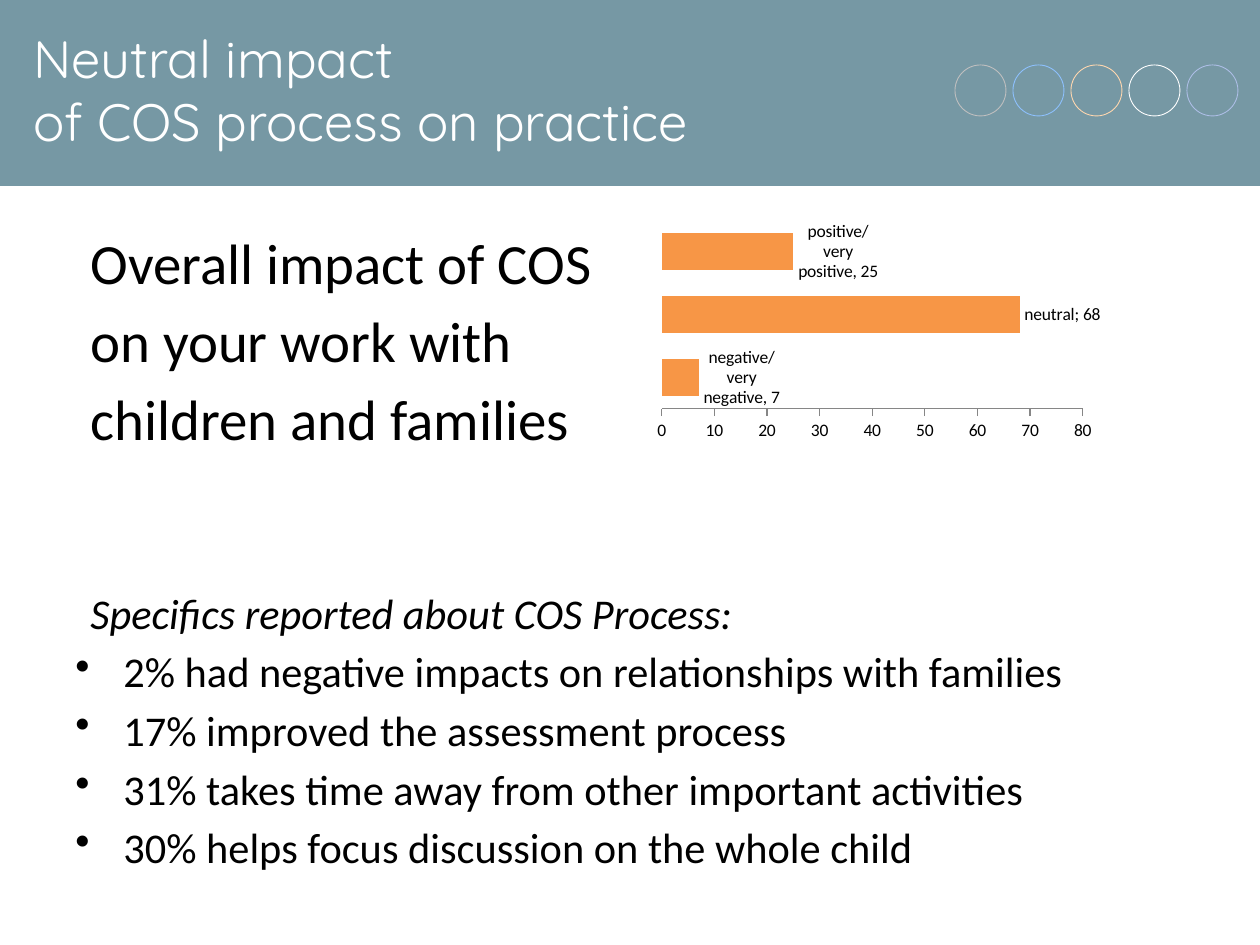
import pptx
import pptx.chart.data
import pptx.dml.color
import pptx.enum.chart
import pptx.enum.shapes
import pptx.enum.text
import pptx.oxml
import pptx.oxml.ns
import pptx.util

COLORS = {
    "band": "7698A4", "white": "FFFFFF", "black": "000000", "bar": "F79646",
    "axis": "868686", "grey": "BFBFBF", "sky": "8DC0FD", "peach": "FFD7AF",
    "periwinkle": "ADBEE6",
}
CHART_NS = pptx.oxml.ns.nsdecls("c")


def px(n):
    return pptx.util.Emu(round(n * 914400 / 126))


def rgb(name):
    return pptx.dml.color.RGBColor.from_string(COLORS[name])


class SlideBuilder:
    body_font = "Calibri"
    title_font = "Quicksand"

    def __init__(self, slide):
        self.s = slide

    def shape(self, kind, box, fill=None, line=None):
        sp = self.s.shapes.add_shape(kind, *map(px, box))
        sp.shadow.inherit = False
        if fill:
            sp.fill.solid()
            sp.fill.fore_color.rgb = rgb(fill)
        else:
            sp.fill.background()
        if line:
            sp.line.color.rgb = rgb(line)
            sp.line.width = pptx.util.Pt(0.5)
        else:
            sp.line.fill.background()

    def text_frame(self, box):
        tf = self.s.shapes.add_textbox(*map(px, box)).text_frame
        tf.word_wrap = True
        return tf

    def style(self, p, size, font, color, italic=False):
        for r in p.runs:
            r.font.size = pptx.util.Pt(size)
            r.font.name = font
            r.font.color.rgb = rgb(color)
            r.font.italic = italic

    def title(self, box, text):
        tf = self.text_frame(box)
        tf.vertical_anchor = pptx.enum.text.MSO_ANCHOR.MIDDLE
        p = tf.paragraphs[0]
        p.text = text
        self.style(p, 30, self.title_font, "white")

    def body(self, box, lines):
        """Each line is (text, size, space before, italic, bulleted)."""
        tf = self.text_frame(box)
        tf.text = "\n".join(line[0] for line in lines)
        for p, (_, size, before, italic, bulleted) in zip(tf.paragraphs, lines):
            p.space_before = pptx.util.Pt(before)
            self.style(p, size, self.body_font, "black", italic)
            pPr = p._p.get_or_add_pPr()
            pPr.set("marL", str(px(48 if bulleted else 15)))
            pPr.set("indent", str(px(-48 if bulleted else 0)))
            if bulleted:
                pPr.append(pptx.oxml.parse_xml(
                    f'<a:buChar {pptx.oxml.ns.nsdecls("a")} char="•"/>'))

    def bar_chart(self, box, values, point_labels):
        data = pptx.chart.data.CategoryChartData()
        data.categories = list(values)
        data.add_series("Series 1", list(values.values()))
        chart = self.s.shapes.add_chart(
            pptx.enum.chart.XL_CHART_TYPE.BAR_CLUSTERED, *map(px, box), data).chart
        chart.has_legend = chart.has_title = False
        chart.font.size = pptx.util.Pt(10)
        chart.font.name = self.body_font
        chart.font.color.rgb = rgb("black")

        chart.category_axis.visible = False
        axis = chart.value_axis
        axis.has_major_gridlines = False
        axis.minimum_scale, axis.maximum_scale, axis.major_unit = 0, 80, 10
        axis.major_tick_mark = pptx.enum.chart.XL_TICK_MARK.OUTSIDE
        axis.format.line.color.rgb = rgb("axis")

        plot = chart.plots[0]
        plot.vary_by_categories = False
        plot.gap_width, plot.overlap = 69, 20
        series = plot.series[0]
        series.format.fill.solid()
        series.format.fill.fore_color.rgb = rgb("bar")
        self.bar_labels(series, point_labels)
        self.plot_layout(chart, x=0.046, y=0.083, w=0.89, h=0.75)

    def bar_labels(self, series, point_labels):
        outside = pptx.enum.chart.XL_LABEL_POSITION.OUTSIDE_END
        labels = series.data_labels
        labels.show_value = labels.show_category_name = True
        labels.position = outside
        labels._element.find(pptx.oxml.ns.qn("c:showBubbleSize")).addnext(
            pptx.oxml.parse_xml(f"<c:separator {CHART_NS}>; </c:separator>"))
        for index, text in point_labels.items():
            label = series.points[index].data_label
            label.text_frame.text = text
            self.style(label.text_frame.paragraphs[0], 10, self.body_font, "black")
            label.position = outside

    def plot_layout(self, chart, **fractions):
        area = chart._chartSpace.chart.plotArea
        for old in area.findall(pptx.oxml.ns.qn("c:layout")):
            area.remove(old)
        sizes = "".join(f'<c:{k} val="{v}"/>' for k, v in fractions.items())
        area.insert(0, pptx.oxml.parse_xml(
            f'<c:layout {CHART_NS}><c:manualLayout><c:layoutTarget val="inner"/>'
            f'<c:xMode val="edge"/><c:yMode val="edge"/>{sizes}'
            "</c:manualLayout></c:layout>"))


def main():
    prs = pptx.Presentation()
    prs.slide_width, prs.slide_height = px(1260), px(945)
    b = SlideBuilder(prs.slides.add_slide(prs.slide_layouts[6]))
    kinds = pptx.enum.shapes.MSO_SHAPE

    b.shape(kinds.RECTANGLE, (0, -3, 1260, 189), fill="band")
    for i, color in enumerate(["grey", "sky", "peach", "white", "periwinkle"]):
        b.shape(kinds.OVAL, (955 + 58 * i, 65, 51, 51), line=color)
    b.title((21, 10, 1092, 158), "Neutral impact\vof COS process on practice")

    headline = ["Overall impact of COS", "on your work with", "children and families"]
    findings = [
        "2% had negative impacts on relationships with families",
        "17% improved the assessment process",
        "31% takes time away from other important activities",
        "30% helps focus discussion on the whole child",
    ]
    b.body((63, 221, 1050, 609), [
        *[(text, 32.5, 5.8, False, False) for text in headline],
        ("Specifics reported about COS Process:", 24.2, 77, True, False),
        *[(text, 24.2, 4.4, False, True) for text in findings],
    ])
    b.bar_chart(
        (640, 199, 473, 252),
        {"negative/very negative": 7, "neutral": 68, "positive/very positive": 25},
        {0: "negative/ very negative, 7", 2: "positive/ very positive, 25"})
    prs.save("out.pptx")


if __name__ == "__main__":
    main()
